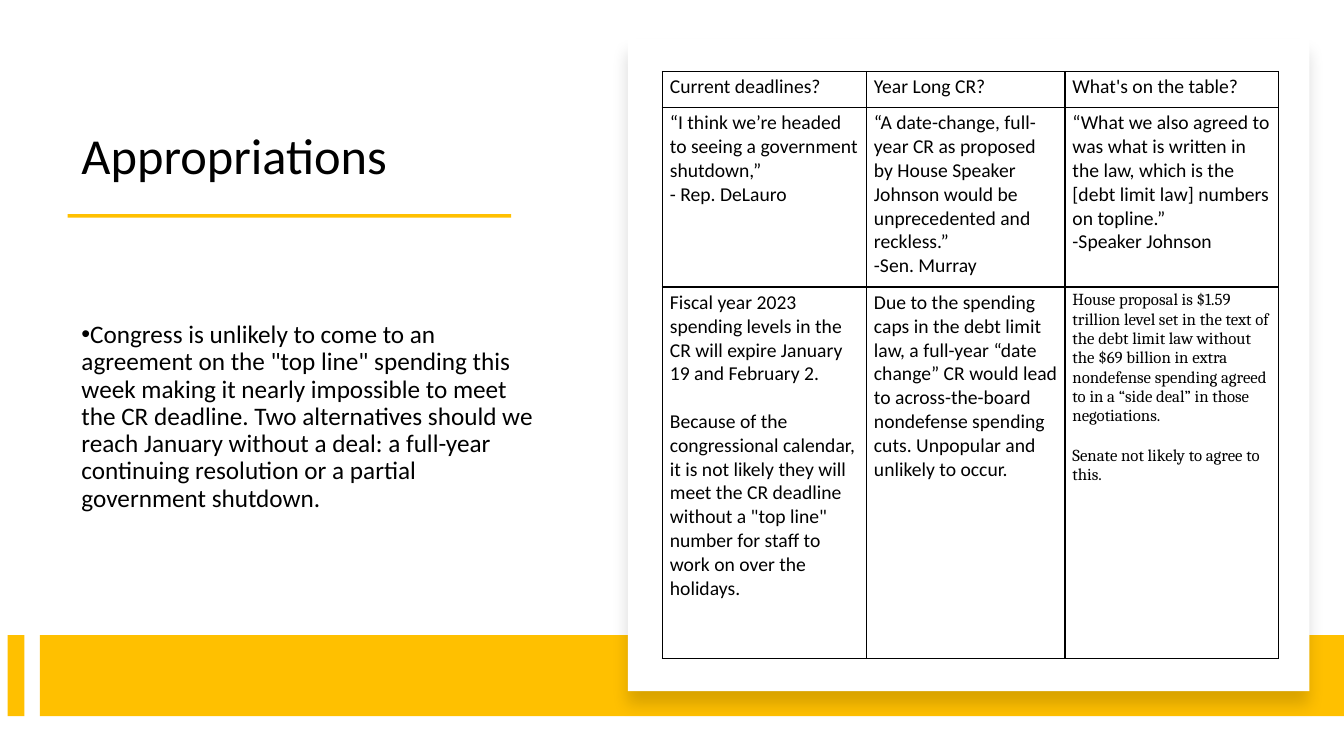
from lxml.etree import SubElement
from pptx import Presentation
from pptx.dml.color import RGBColor
from pptx.enum.shapes import MSO_SHAPE
from pptx.enum.text import MSO_ANCHOR, MSO_AUTO_SIZE, PP_ALIGN
from pptx.oxml.ns import qn
from pptx.util import Pt

# Content
TITLE = "Appropriations"
SUMMARY = (
    'Congress is unlikely to come to an agreement on the "top line" spending this week '
    "making it nearly impossible to meet the CR deadline. Two alternatives should we "
    "reach January without a deal: a full-year continuing resolution or a partial "
    "government shutdown."
)
# Each cell is a list of paragraphs; \v is a line break
ROWS = [
    [["Current deadlines?"], ["Year Long CR?"], ["What's on the table?"]],
    [
        ["“I think we’re headed to seeing a government shutdown,”\v- Rep. DeLauro"],
        ["“A date-change, full-year CR as proposed by House Speaker Johnson would be "
         "unprecedented and reckless.”\v-Sen. Murray"],
        ["“What we also agreed to was what is written in the law, which is the "
         "[debt limit law] numbers on topline.”", "-Speaker Johnson"],
    ],
    [
        ["Fiscal year 2023 spending levels in the CR will expire January 19 and February 2.",
         "Because of the congressional calendar, it is not likely they will meet the CR "
         'deadline without a "top line" number for staff to work on over the holidays.'],
        ["Due to the spending caps in the debt limit law, a full-year “date change” CR "
         "would lead to across-the-board nondefense spending cuts. Unpopular and unlikely "
         "to occur."],
        ["House proposal is $1.59 trillion level set in the text of the debt limit law "
         "without the $69 billion in extra nondefense spending agreed to in a “side deal” "
         "in those negotiations.", "Senate not likely to agree to this."],
    ],
]
COL_WIDTHS = [145.8, 141.8, 152.6]
ROW_HEIGHTS = [25.5, 128.4, 265.4]

BLACK = RGBColor(0, 0, 0)
WHITE = RGBColor(255, 255, 255)
GOLD = RGBColor(255, 192, 0)

# Left, top, width, height in points
TITLE_BOX = (51, 42, 337, 94)
SUMMARY_BOX = (51, 160, 337, 276)
RULE = (48.4, 153, 316.8, 2.4)
BAND_TOP, BAND_HEIGHT = 453.6, 58
SHORT_BAND = (5.4, BAND_TOP, 12, BAND_HEIGHT)
LONG_BAND = (28.4, BAND_TOP, 931.6, BAND_HEIGHT)
CARD = (448.5, 28, 486.8, 465.7)
TABLE = (473.1, 51.1, sum(COL_WIDTHS), sum(ROW_HEIGHTS))


def write(tf, paragraphs, size, font="Calibri", gap=0, after=0, spacing=1.0):
    """Fill a text frame; gap is the space before each later paragraph."""
    for i, text in enumerate(paragraphs):
        p = tf.add_paragraph() if i else tf.paragraphs[0]
        p.text = text
        p.alignment = PP_ALIGN.LEFT
        p.line_spacing = spacing
        p.space_before = Pt(gap if i else 0)
        p.space_after = Pt(after)
        for r in p.runs:
            r.font.size, r.font.name = Pt(size), font
            r.font.color.rgb = BLACK


def place(sp, box, anchor):
    sp.left, sp.top, sp.width, sp.height = map(Pt, box)
    sp.text_frame.auto_size = MSO_AUTO_SIZE.NONE
    sp.text_frame.vertical_anchor = anchor


def add_rect(s, box, color):
    sp = s.shapes.add_shape(MSO_SHAPE.RECTANGLE, *map(Pt, box))
    sp.shadow.inherit = False
    sp.fill.solid()
    sp.fill.fore_color.rgb = color
    sp.line.fill.background()
    return sp


def add_black(parent, alpha=None):
    clr = SubElement(parent, qn("a:srgbClr"), val=str(BLACK))
    if alpha:
        SubElement(clr, qn("a:alpha"), val=str(alpha * 1000))


def add_shadow(sp, blur, distance, alpha):
    effects = sp._element.spPr.find(qn("a:effectLst"))
    shadow = SubElement(effects, qn("a:outerShdw"), blurRad=str(Pt(blur)),
                        dist=str(Pt(distance)), dir="5400000", algn="t", rotWithShape="0")
    add_black(shadow, alpha)


def add_borders(cell):
    tcPr = cell._tc.get_or_add_tcPr()
    for side in "LRTB":
        ln = SubElement(tcPr, qn("a:ln" + side), w=str(Pt(1)))
        add_black(SubElement(ln, qn("a:solidFill")))


def main():
    prs = Presentation()
    prs.slide_width, prs.slide_height = Pt(960), Pt(540)
    s = prs.slides.add_slide(prs.slide_layouts[1])

    # Title and summary
    title, summary = s.shapes.title, s.placeholders[1]
    place(title, TITLE_BOX, MSO_ANCHOR.BOTTOM)
    write(title.text_frame, [TITLE], 36, spacing=0.9)
    place(summary, SUMMARY_BOX, MSO_ANCHOR.MIDDLE)
    write(summary.text_frame, [SUMMARY], 18, after=6, spacing=0.9)
    pPr = summary.text_frame.paragraphs[0]._p.get_or_add_pPr()
    pPr.set("marL", "0")
    pPr.set("indent", str(-Pt(18)))
    SubElement(pPr, qn("a:buChar"), char="•")

    # Gold rule and bands, then the white card
    for box in (RULE, SHORT_BAND, LONG_BAND):
        add_rect(s, box, GOLD)
    add_shadow(add_rect(s, CARD, WHITE), blur=11, distance=10, alpha=15)

    # Table
    table = s.shapes.add_table(len(ROWS), len(COL_WIDTHS), *map(Pt, TABLE)).table
    table.first_row = table.horz_banding = False
    for col, width in zip(table.columns, COL_WIDTHS):
        col.width = Pt(width)
    for row, height in zip(table.rows, ROW_HEIGHTS):
        row.height = Pt(height)
    for i, row in enumerate(ROWS):
        for j, paragraphs in enumerate(row):
            cell = table.cell(i, j)
            cell.margin_left = cell.margin_right = Pt(5.4)
            cell.margin_top = cell.margin_bottom = Pt(2.7)
            add_borders(cell)
            cell.fill.background()
            size, font = (12, "Cambria") if (i, j) == (2, 2) else (14, "Calibri")
            gap = size * 1.2 if i == 2 else 0
            write(cell.text_frame, paragraphs, size, font=font, gap=gap)

    prs.save("out.pptx")


if __name__ == "__main__":
    main()
